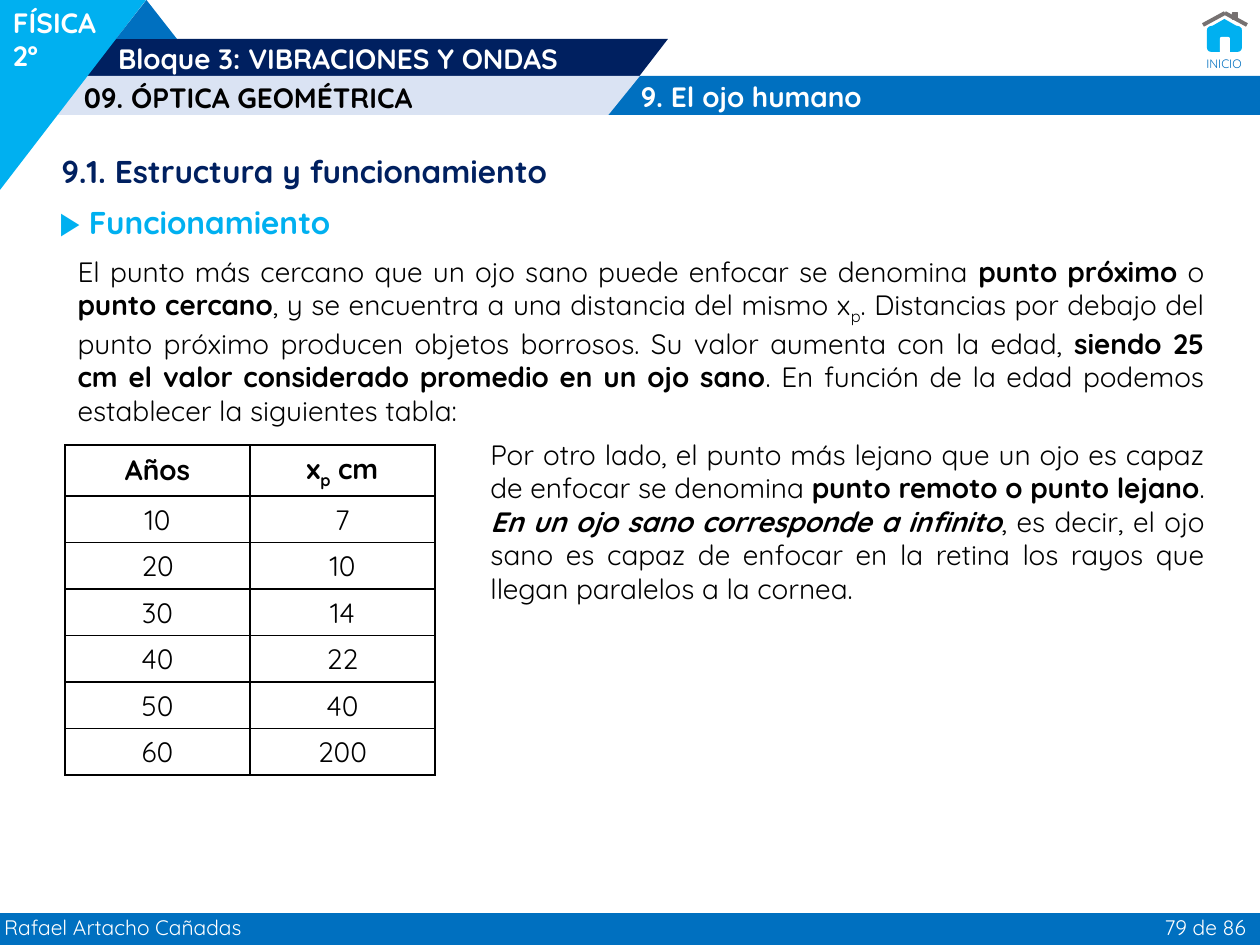
import pptx
import pptx.dml.color
import pptx.enum.shapes
import pptx.enum.text
import pptx.oxml
import pptx.oxml.ns
import pptx.util
from lxml import etree

PX = 7257  # EMU in one px, 126 px to the inch
BLUE, NAVY, CYAN, PALE = "0070C0", "002060", "00B0F0", "DAE3F3"
GRAY, BLACK, WHITE = "767171", "000000", "FFFFFF"
KIND = pptx.enum.shapes.MSO_SHAPE
ALIGN = pptx.enum.text.PP_ALIGN
qn = pptx.oxml.ns.qn


def rgb(color):
    return pptx.dml.color.RGBColor.from_string(color)


def write(frame, spans, size, color, align=ALIGN.LEFT):
    """Fill one paragraph with (text, style) spans; style holds bold, italic, sub."""
    para = frame.paragraphs[0]
    para.alignment = align
    para.space_before = pptx.util.Pt(0)
    for text, style in spans:
        span = para.add_run()
        span.text = text
        span.font.name = "Quicksand"
        span.font.size = pptx.util.Pt(size)
        span.font.color.rgb = rgb(color)
        span.font.bold = "bold" in style
        span.font.italic = "italic" in style
        if "sub" in style:
            span.font._element.set("baseline", "-25000")


deck = pptx.Presentation()
deck.slide_width = pptx.util.Inches(10)
deck.slide_height = pptx.util.Inches(7.5)
page = deck.slides.add_slide(deck.slide_layouts[1])
title, body = page.placeholders
house = page.shapes.add_group_shape()

# Header bands, footer band and the house icon
bands = [
    (page, KIND.RECTANGLE, (604, 76, 656, 39), BLUE, None),
    (page, KIND.PARALLELOGRAM, (76, 39, 592, 37), NAVY, 0.77),
    (page, KIND.PARALLELOGRAM, (45, 76, 595, 39), PALE, 0.81),
    (page, KIND.RIGHT_TRIANGLE, (0, 0, 146, 190), CYAN, None),
    (page, KIND.ISOSCELES_TRIANGLE, (116, 0, 61, 39), BLUE, None),
    (page, KIND.RECTANGLE, (0, 913, 1260, 32), BLUE, None),
    (house, KIND.ROUNDED_RECTANGLE, (1207, 26, 35, 26), CYAN, None),
    (house, KIND.ISOSCELES_TRIANGLE, (1207, 19, 35, 10), CYAN, None),
    (house, KIND.ROUND_2_SAME_RECTANGLE, (1220, 37, 10, 15), WHITE, None),
    (house, KIND.ROUNDED_RECTANGLE, (1232, 12, 6, 8), GRAY, None),
]
for parent, kind, place, color, slant in bands:
    shape = parent.shapes.add_shape(kind, *[value * PX for value in place])
    shape.shadow.inherit = False
    shape.fill.solid()
    shape.fill.fore_color.rgb = rgb(color)
    shape.line.fill.background()
    if slant:
        shape.adjustments[0] = slant
    if kind == KIND.RIGHT_TRIANGLE:
        shape._element.spPr.get_or_add_xfrm().set("flipV", "1")

for eave in (1203, 1247):
    roof = house.shapes.add_connector(
        pptx.enum.shapes.MSO_CONNECTOR.STRAIGHT, eave * PX, 25 * PX, 1225 * PX, 13 * PX)
    roof.line.color.rgb = rgb(GRAY)
    roof.line.width = pptx.util.Pt(2.25)
    etree.SubElement(roof._element.spPr, qn("a:effectLst"))

# One-line labels: parent, place, text, size, colour, style, alignment
labels = [
    (page, (13, 6, 107, 34), "FÍSICA", 16, WHITE, "bold", ALIGN.LEFT),
    (page, (13, 39, 40, 34), "2º", 16, WHITE, "bold", ALIGN.LEFT),
    (page, (4, 915, 320, 25), "Rafael Artacho Cañadas", 12, WHITE, "", ALIGN.LEFT),
    (page, (1119, 915, 127, 25), "79 de 86", 12, WHITE, "", ALIGN.RIGHT),
    (page, (118, 42, 585, 34), "Bloque 3: VIBRACIONES Y ONDAS", 16, WHITE, "bold", ALIGN.LEFT),
    (page, (84, 81, 348, 34), "09. ÓPTICA GEOMÉTRICA", 16, BLACK, "bold", ALIGN.LEFT),
    (page, (641, 79, 607, 34), "9. El ojo humano", 16, WHITE, "bold", ALIGN.LEFT),
    (house, (1204, 56, 40, 15), "INICIO", 7, BLUE, "", ALIGN.CENTER),
]
for parent, place, text, size, color, style, align in labels:
    box = parent.shapes.add_textbox(*[value * PX for value in place])
    frame = box.text_frame
    frame.word_wrap = True
    frame.margin_left = frame.margin_right = frame.margin_top = frame.margin_bottom = 0
    write(frame, [(text, style)], size, color, align)

# Headings and running text
near_point = [
    ("El punto más cercano que un ojo sano puede enfocar se denomina ", ""),
    ("punto próximo ", "bold"), ("o ", ""), ("punto cercano", "bold"),
    (", y se encuentra a una distancia del mismo x", ""), ("p", "sub"),
    (". Distancias por debajo del punto próximo producen objetos borrosos. "
     "Su valor aumenta con la edad, ", ""),
    ("siendo 25 cm el valor considerado promedio en un ojo sano", "bold"),
    (". En función de la edad podemos establecer la siguientes tabla:", ""),
]
far_point = [
    ("Por otro lado, el punto más lejano que un ojo es capaz de enfocar se denomina ", ""),
    ("punto remoto o punto lejano", "bold"), (". ", ""),
    ("En un ojo sano corresponde a infinito", "bold italic"),
    (", es decir, el ojo sano es capaz de enfocar en la retina los rayos "
     "que llegan paralelos a la cornea.", ""),
]
heading_box = page.shapes.add_textbox(0, 0, PX, PX)
far_box = page.shapes.add_textbox(0, 0, PX, PX)
texts = [
    (title, (49, 146, 1157, 50), [("9.1. Estructura y funcionamiento", "bold")], 18, NAVY, ALIGN.LEFT),
    (heading_box, (47, 197, 1159, 50), [("▶ Funcionamiento", "bold")], 18, CYAN, ALIGN.LEFT),
    (body, (65, 248, 1152, 183), near_point, 16, BLACK, ALIGN.JUSTIFY),
    (far_box, (478, 431, 739, 183), far_point, 16, BLACK, ALIGN.JUSTIFY),
]
for box, place, spans, size, color, align in texts:
    box.left, box.top, box.width, box.height = [value * PX for value in place]
    frame = box.text_frame
    frame.word_wrap = True
    frame.auto_size = pptx.enum.text.MSO_AUTO_SIZE.SHAPE_TO_FIT_TEXT
    frame.vertical_anchor = pptx.enum.text.MSO_ANCHOR.TOP
    properties = frame.paragraphs[0]._p.get_or_add_pPr()
    properties.set("marL", "0")
    properties.set("indent", "0")
    etree.SubElement(properties, qn("a:buNone"))
    write(frame, spans, size, color, align)

# Near point by age
rows = [
    ([("Años", "bold")], [("x", "bold"), ("p", "bold sub"), (" cm", "bold")]),
]
for age, distance in zip((10, 20, 30, 40, 50, 60), (7, 10, 14, 22, 40, 200)):
    rows.append(([(str(age), "")], [(str(distance), "")]))
table = page.shapes.add_table(len(rows), 2, 65 * PX, 445 * PX, 370 * PX, 326 * PX).table
table.first_row = table.horz_banding = False
for row, contents in enumerate(rows):
    for column, spans in enumerate(contents):
        cell = table.cell(row, column)
        cell.vertical_anchor = pptx.enum.text.MSO_ANCHOR.MIDDLE
        for side in ("lnL", "lnR", "lnT", "lnB"):
            border = etree.SubElement(cell._tc.get_or_add_tcPr(), qn("a:" + side), w="12700")
            fill = etree.SubElement(border, qn("a:solidFill"))
            etree.SubElement(fill, qn("a:srgbClr"), val=BLACK)
        cell.fill.background()
        write(cell.text_frame, spans, 16, BLACK, ALIGN.CENTER)

# The icon stands in front of the bands
page.shapes._spTree.append(house._element)
deck.save("out.pptx")
